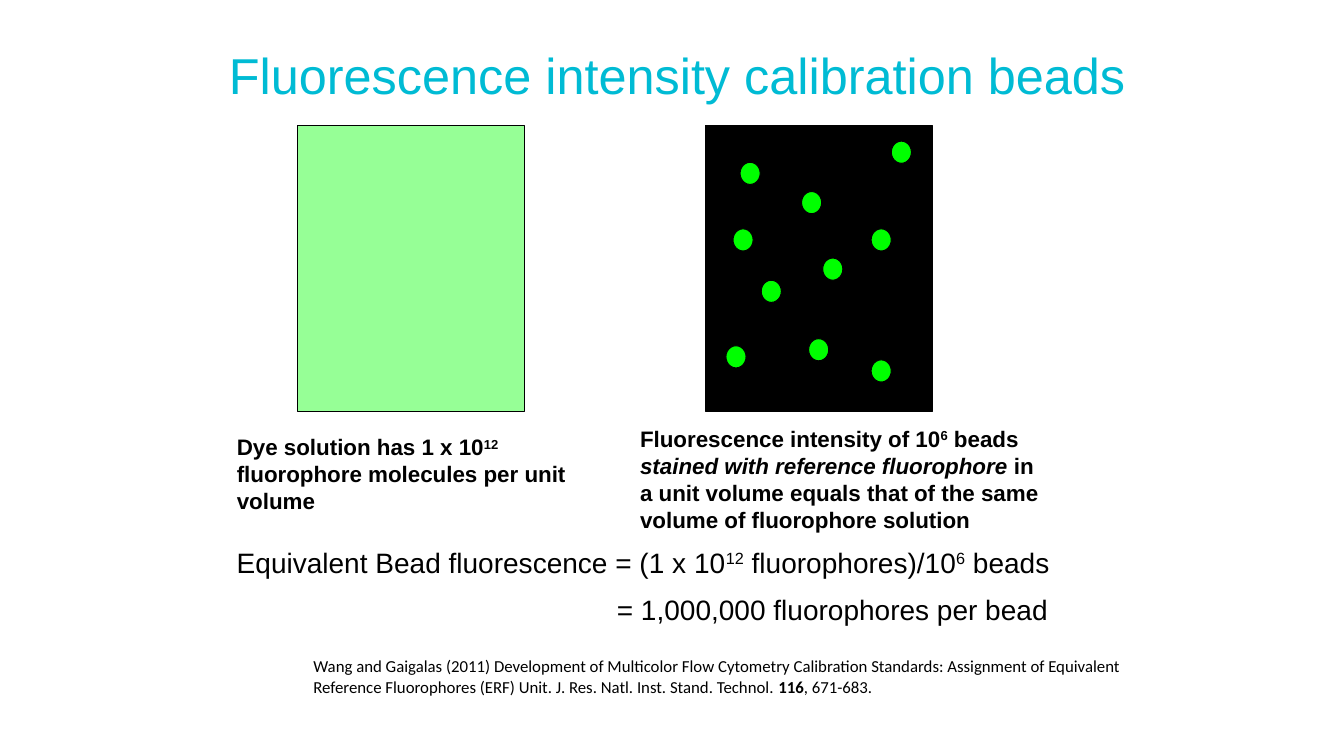
import pptx
import pptx.util
import pptx.dml.color
import pptx.enum.shapes
import pptx.enum.text
import pptx.oxml
import pptx.oxml.ns

Inches = pptx.util.Inches
Pt = pptx.util.Pt
MSO_SHAPE = pptx.enum.shapes.MSO_SHAPE
RGBColor = pptx.dml.color.RGBColor
CYAN = RGBColor(0x00, 0xBB, 0xD4)
GREEN = RGBColor(0x00, 0xFF, 0x00)
BLACK = RGBColor(0x00, 0x00, 0x00)

presentation = pptx.Presentation()
presentation.slide_width = Inches(13.33)
presentation.slide_height = Inches(7.5)
slide = presentation.slides.add_slide(presentation.slide_layouts[5])


def add_figure(kind, left, top, width, height, color):
    figure = slide.shapes.add_shape(
        kind, Inches(left), Inches(top), Inches(width), Inches(height))
    figure.shadow.inherit = False
    figure.fill.solid()
    figure.fill.fore_color.rgb = color
    figure.line.color.rgb = BLACK
    figure.line.width = Pt(0.75)
    return figure


def add_runs(paragraph, runs, size, font_name="Arial", color=BLACK):
    for text, style in runs:
        run = paragraph.add_run()
        run.text = text
        run.font.size = Pt(size)
        run.font.name = font_name
        run.font.color.rgb = color
        run.font.bold = "b" in style
        run.font.italic = "i" in style
        if "^" in style:
            run._r.get_or_add_rPr().set("baseline", "30000")


title = slide.shapes.title
title.left, title.top = Inches(2.17), Inches(0.3)
title.width, title.height = Inches(10.6), Inches(0.95)
title.text_frame.auto_size = pptx.enum.text.MSO_AUTO_SIZE.NONE
title.text_frame.vertical_anchor = pptx.enum.text.MSO_ANCHOR.MIDDLE
heading = title.text_frame.paragraphs[0]
heading.alignment = pptx.enum.text.PP_ALIGN.LEFT
heading.line_spacing = 0.9
add_runs(heading, [("Fluorescence intensity calibration beads", "")], 36, color=CYAN)

dye_solution = add_figure(MSO_SHAPE.RECTANGLE, 2.95, 1.25, 2.25, 2.83, GREEN)
dye_color = dye_solution.fill._xPr.find(".//" + pptx.oxml.ns.qn("a:srgbClr"))
dye_color.append(pptx.oxml.parse_xml(
    f'<a:alpha {pptx.oxml.ns.nsdecls("a")} val="41000"/>'))

add_figure(MSO_SHAPE.RECTANGLE, 7, 1.25, 2.25, 2.83, BLACK)
bead_positions = [
    (7.34, 1.61), (8.84, 1.4), (7.2, 3.43), (8.64, 2.27), (7.55, 2.78),
    (8.16, 2.56), (7.95, 1.9), (8.64, 3.57), (8.02, 3.36), (7.27, 2.27),
]
for left, top in bead_positions:
    add_figure(MSO_SHAPE.OVAL, left, top, 0.2, 0.22, GREEN)

bead_caption = [
    ("Fluorescence intensity of 10", "b"), ("6", "b^"), (" beads ", "b"),
    ("stained with reference fluorophore ", "bi"),
    ("in a unit volume equals that of the same volume of fluorophore solution", "b"),
]
dye_caption = [
    ("Dye solution has 1 x 10", "b"), ("12", "b^"),
    (" fluorophore molecules per unit volume", "b"),
]
equation = [
    ("Equivalent Bead fluorescence = (1 x 10", ""), ("12", "^"),
    (" fluorophores)/10", ""), ("6", "^"), (" beads", ""),
]
equation_result = [("= 1,000,000 fluorophores per bead", "")]
citation = [
    ("Wang and Gaigalas (2011) Development of Multicolor Flow Cytometry Calibration "
     "Standards: Assignment of Equivalent Reference Fluorophores (ERF) Unit. "
     "J. Res. Natl. Inst. Stand. Technol. ", ""),
    ("116", "b"), (", 671-683.", ""),
]

text_blocks = [
    (6.25, 4.17, 4.17, 1.18, 16, "Arial", [bead_caption]),
    (2.25, 4.25, 3.58, 0.91, 16, "Arial", [dye_caption]),
    (2.25, 5.36, 8.5, 0.94, 20, "Arial", [equation, equation_result]),
    (3.01, 6.46, 8.39, 0.5, 12, "Calibri", [citation]),
]
for left, top, width, height, size, font_name, lines in text_blocks:
    frame = slide.shapes.add_textbox(
        Inches(left), Inches(top), Inches(width), Inches(height)).text_frame
    frame.word_wrap = True
    frame.auto_size = pptx.enum.text.MSO_AUTO_SIZE.SHAPE_TO_FIT_TEXT
    for index, runs in enumerate(lines):
        paragraph = frame.paragraphs[0] if index == 0 else frame.add_paragraph()
        if index > 0:
            paragraph.space_before = Pt(size / 2)
            paragraph._p.get_or_add_pPr().set("marL", str(Inches(3.77)))
        add_runs(paragraph, runs, size, font_name)

presentation.save("out.pptx")
